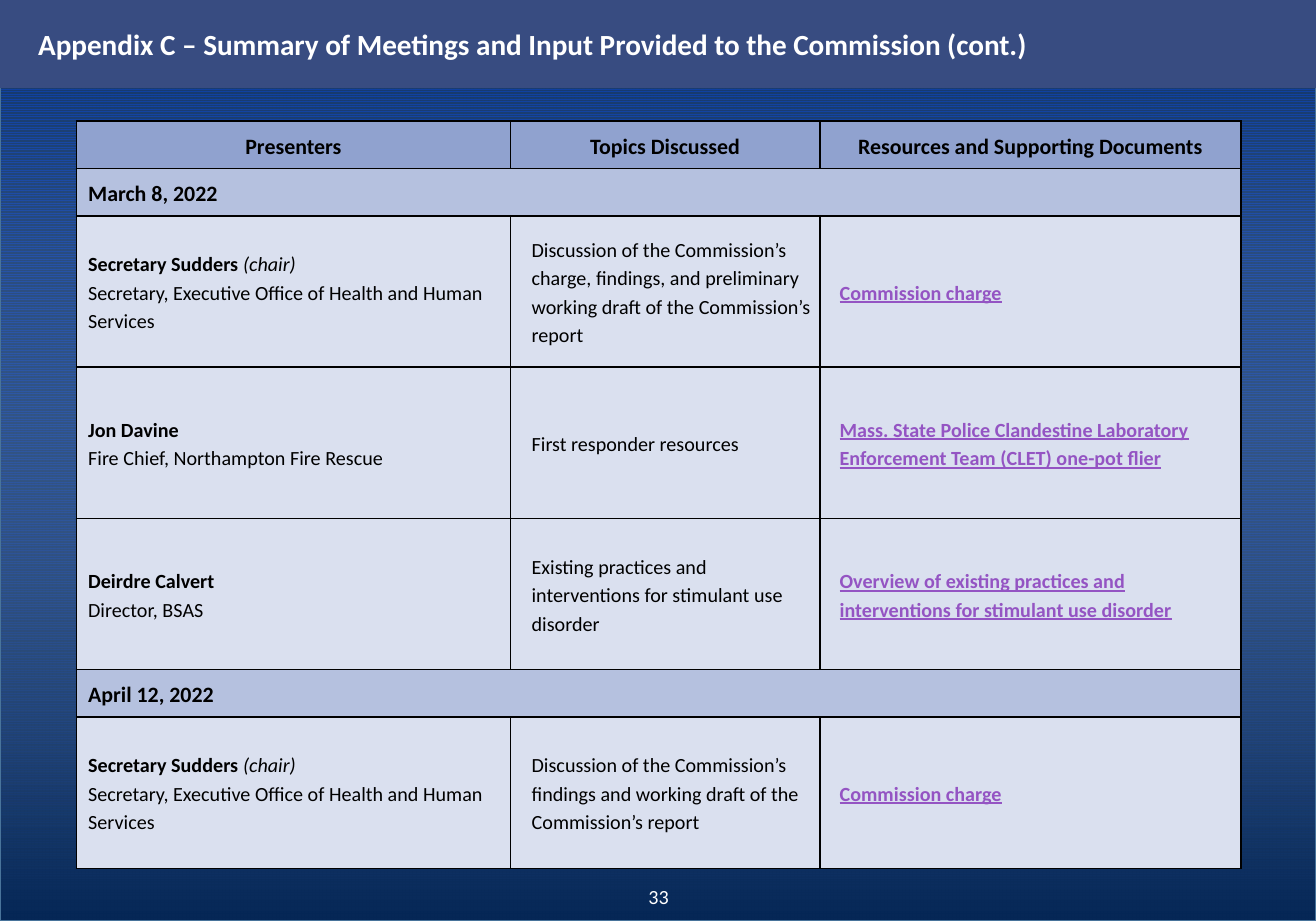
from dataclasses import dataclass

import pptx
import pptx.dml.color
import pptx.enum.dml
import pptx.enum.shapes
import pptx.enum.text
import pptx.oxml
import pptx.oxml.ns
import pptx.util

Inches = pptx.util.Inches
Pt = pptx.util.Pt
Align = pptx.enum.text.PP_ALIGN
Anchor = pptx.enum.text.MSO_ANCHOR


@dataclass(frozen=True)
class Theme:
    font: str = "Calibri"
    title_size: int = 16
    heading_size: int = 12
    body_size: int = 11
    white: str = "FFFFFF"
    black: str = "000000"
    link: str = "9454C3"
    title_bar: str = "384C81"
    header_fill: str = "90A2CF"
    date_fill: str = "B5C1DF"
    body_fill: str = "DAE0EF"
    stripe: str = "003399"
    backdrop: str = "072C62"
    fade_start: str = "062756"
    fade_end: str = "B6D1FA"
    frame: str = "49749B"


THEME = Theme()
COLUMN_WIDTHS = (3.3, 2.35, 3.2)
COLUMN_INDENTS = (0.06, 0.13, 0.12)
HEADING_HEIGHT, MEETING_HEIGHT = 0.36, 1.15

HEADERS = ("Presenters", "Topics Discussed", "Resources and Supporting Documents")
SUDDERS = ("Secretary Sudders ", "(chair)",
           "Secretary, Executive Office of Health and Human Services")
# A one-item row is a meeting date; the others hold presenter, topic and resource.
ROWS = (
    ("March 8, 2022",),
    (SUDDERS,
     "Discussion of the Commission’s charge, findings, and preliminary "
     "working draft of the Commission’s report",
     "Commission charge"),
    (("Jon Davine", "", "Fire Chief, Northampton Fire Rescue"),
     "First responder resources",
     "Mass. State Police Clandestine Laboratory Enforcement Team (CLET) one-pot flier"),
    (("Deirdre Calvert", "", "Director, BSAS"),
     "Existing practices and interventions for stimulant use disorder",
     "Overview of existing practices and interventions for stimulant use disorder"),
    ("April 12, 2022",),
    (SUDDERS,
     "Discussion of the Commission’s findings and working draft of the "
     "Commission’s report",
     "Commission charge"),
)


def rgb(value):
    return pptx.dml.color.RGBColor.from_string(value)


def fill_solid(item, color):
    item.fill.solid()
    item.fill.fore_color.rgb = rgb(color)


def style(para, size, color, bold=False, align=Align.LEFT):
    para.alignment = align
    para.font.name = THEME.font
    para.font.size = Pt(size)
    para.font.color.rgb = rgb(color)
    para.font.bold = bold


def add_background(page):
    """Striped page fill under a frame that fades out towards the top."""
    fill = page.background.fill
    fill.patterned()
    fill.pattern = pptx.enum.dml.MSO_PATTERN.LIGHT_HORIZONTAL
    fill.fore_color.rgb = rgb(THEME.stripe)
    fill.back_color.rgb = rgb(THEME.backdrop)

    fade = page.shapes.add_shape(
        pptx.enum.shapes.MSO_SHAPE.RECTANGLE, 0, 0, Inches(10), Inches(7))
    fade.shadow.inherit = False
    fade.line.color.rgb = rgb(THEME.frame)
    fade.line.width = Pt(1.5)
    fade.fill.gradient()
    fade.fill.gradient_angle = 90
    stops = fade.fill.gradient_stops
    for stop, color, position in zip(stops, (THEME.fade_start, THEME.fade_end), (0, 1)):
        stop.color.rgb = rgb(color)
        stop.position = position
    end_color = fade.fill._fill._gradFill.findall(".//" + pptx.oxml.ns.qn("a:srgbClr"))[-1]
    pptx.oxml.ns.qn("a:alpha")
    end_color.append(pptx.oxml.parse_xml(
        f'<a:alpha {pptx.oxml.ns.nsdecls("a")} val="0"/>'))
    page.shapes._spTree.insert(2, fade._element)


def add_title(page, text):
    title = page.shapes.title
    title.left, title.top, title.width, title.height = 0, 0, Inches(10), Inches(0.67)
    fill_solid(title, THEME.title_bar)
    frame = title.text_frame
    frame.text = text
    frame.auto_size = pptx.enum.text.MSO_AUTO_SIZE.NONE
    frame.vertical_anchor = Anchor.MIDDLE
    frame.margin_left = Inches(0.29)
    style(frame.paragraphs[0], THEME.title_size, THEME.white, bold=True)


def set_borders(cell):
    properties = cell._tc.get_or_add_tcPr()
    for index, side in enumerate(("lnL", "lnR", "lnT", "lnB")):
        properties.insert(index, pptx.oxml.parse_xml(
            f'<a:{side} {pptx.oxml.ns.nsdecls("a")} w="{Pt(1)}"><a:solidFill>'
            f'<a:srgbClr val="{THEME.black}"/></a:solidFill></a:{side}>'))


def format_cell(cell, color):
    fill_solid(cell, color)
    set_borders(cell)
    cell.vertical_anchor = Anchor.MIDDLE
    cell.margin_left = cell.margin_right = Inches(0.03)
    cell.margin_top = cell.margin_bottom = Inches(0.01)


def write_line(para, text, size, indent=0.0, color=THEME.black, bold=False,
               align=Align.LEFT):
    properties = para._p.get_or_add_pPr()
    properties.set("marL", str(Inches(indent)))
    properties.set("indent", "0")
    para.line_spacing = 1.15
    style(para, size, color, bold, align)
    para.add_run().text = text


def write_presenter(cell, presenter):
    name, role, position = presenter
    first = cell.text_frame.paragraphs[0]
    write_line(first, name, THEME.body_size, COLUMN_INDENTS[0])
    first.runs[0].font.bold = True
    if role:
        span = first.add_run()
        span.text = role
        span.font.italic = True
    write_line(cell.text_frame.add_paragraph(), position,
               THEME.body_size, COLUMN_INDENTS[0])


def write_meeting(cells, meeting):
    presenter, topic, resource = meeting
    write_presenter(cells[0], presenter)
    write_line(cells[1].text_frame.paragraphs[0], topic,
               THEME.body_size, COLUMN_INDENTS[1])
    link = cells[2].text_frame.paragraphs[0]
    write_line(link, resource, THEME.body_size, COLUMN_INDENTS[2],
               THEME.link, bold=True)
    link.font.underline = True


def add_meeting_table(page):
    heights = [HEADING_HEIGHT] + [
        HEADING_HEIGHT if len(row) == 1 else MEETING_HEIGHT for row in ROWS]
    table = page.shapes.add_table(
        len(heights), len(COLUMN_WIDTHS), Inches(0.58), Inches(0.92),
        Inches(sum(COLUMN_WIDTHS)), Inches(sum(heights))).table
    table.first_row = table.horz_banding = False
    for column, width in zip(table.columns, COLUMN_WIDTHS):
        column.width = Inches(width)

    for index, (content, height) in enumerate(zip((HEADERS,) + ROWS, heights)):
        table.rows[index].height = Inches(height)
        cells = list(table.rows[index].cells)
        is_date = len(content) == 1
        color = (THEME.header_fill if index == 0
                 else THEME.date_fill if is_date else THEME.body_fill)
        for cell in cells:
            format_cell(cell, color)
        if index == 0:
            for cell, text in zip(cells, content):
                write_line(cell.text_frame.paragraphs[0], text, THEME.heading_size,
                           bold=True, align=Align.CENTER)
        elif is_date:
            cells[0].merge(cells[-1])
            write_line(cells[0].text_frame.paragraphs[0], content[0],
                       THEME.heading_size, COLUMN_INDENTS[0], bold=True)
        else:
            write_meeting(cells, content)


def add_page_number(page, number):
    box = page.shapes.add_textbox(Inches(4.17), Inches(6.67), Inches(1.67), Inches(0.33))
    box.text_frame.word_wrap = True
    box.text_frame.text = number
    style(box.text_frame.paragraphs[0], THEME.body_size, THEME.white, align=Align.CENTER)


def main():
    deck = pptx.Presentation()
    deck.slide_width, deck.slide_height = Inches(10), Inches(7)
    page = deck.slides.add_slide(deck.slide_layouts.get_by_name("Title Only"))
    add_background(page)
    add_title(page, "Appendix C – Summary of Meetings and Input Provided "
                    "to the Commission (cont.)")
    add_meeting_table(page)
    add_page_number(page, "33")
    deck.save("out.pptx")


if __name__ == "__main__":
    main()
